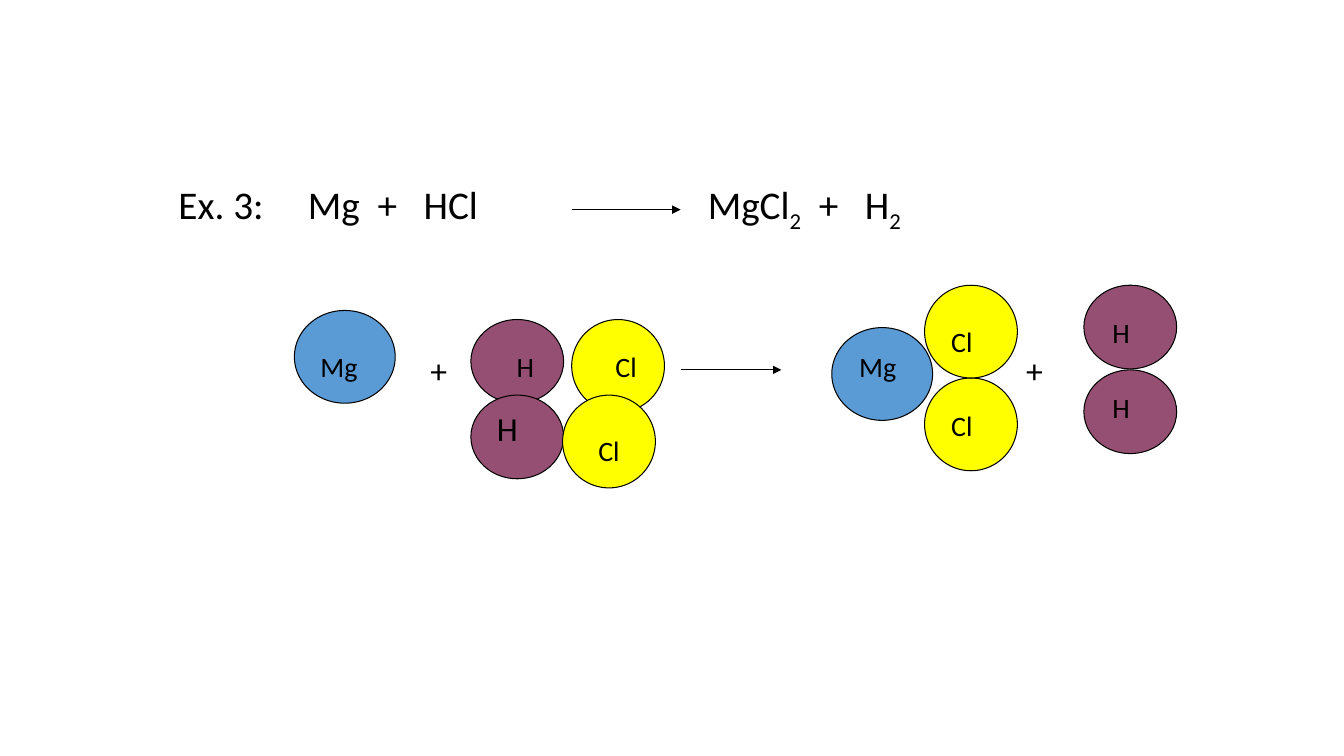
from lxml import etree
from pptx import Presentation
from pptx.dml.color import RGBColor
from pptx.enum.shapes import MSO_CONNECTOR as CONNECTOR, MSO_SHAPE as SHAPE
from pptx.enum.text import MSO_AUTO_SIZE as AUTO_SIZE, PP_ALIGN as ALIGN
from pptx.oxml.ns import qn
from pptx.util import Inches, Pt

COLORS = {"ink": "000000", "Mg": "5B9BD5", "H": "954F72", "Cl": "FFFF00"}
ATOM_SIZES = {"Mg": (1, 0.92), "H": (0.92, 0.83), "Cl": (0.92, 0.92)}
LABEL_WIDTHS = {"Mg": 0.75, "H": 0.58, "Cl": 0.58, "+": 0.5}


def add_run(paragraph, text, size):
    run = paragraph.add_run()
    run.text = text
    run.font.size = Pt(size)
    run.font.name = "Calibri"
    run.font.color.rgb = RGBColor.from_string(COLORS["ink"])
    return run


def add_label(text, left, top, size=20, align=ALIGN.CENTER):
    height = 0.43 if size == 20 else 0.5
    label = slide.shapes.add_textbox(
        Inches(left), Inches(top), Inches(LABEL_WIDTHS[text]), Inches(height))
    label.text_frame.word_wrap = True
    label.text_frame.auto_size = AUTO_SIZE.SHAPE_TO_FIT_TEXT
    paragraph = label.text_frame.paragraphs[0]
    paragraph.alignment = align
    add_run(paragraph, text, size)


presentation = Presentation()
presentation.slide_width = Inches(13.33)
presentation.slide_height = Inches(7.5)
slide = presentation.slides.add_slide(presentation.slide_layouts[1])
title = slide.shapes.title.element
title.getparent().remove(title)

# Equation in symbols
equation = slide.placeholders[1]
equation.left, equation.top = Inches(1.67), Inches(1.75)
equation.width, equation.height = Inches(9), Inches(4.95)
equation.text_frame.auto_size = AUTO_SIZE.NONE
formula = equation.text_frame.paragraphs[0]
formula.line_spacing = 0.9
formula.space_before = Pt(10)
for text, is_subscript in [("Ex. 3:     Mg  +   HCl    \t\tMgCl", False),
                           ("2", True), ("  +   H", False), ("2", True)]:
    run = add_run(formula, text, 28)
    if is_subscript:
        run.font._element.set("baseline", "-25000")

# Hanging indent without bullet, and default tabs one inch apart
properties = formula._p.get_or_add_pPr()
body_style = presentation.slide_master.element.find(
    ".//" + qn("p:bodyStyle") + "/" + qn("a:lvl1pPr"))
for style in (body_style, properties):
    style.set("marL", str(Inches(0.25)))
    style.set("indent", str(Inches(-0.25)))
    style.set("defTabSz", str(Inches(1)))
etree.SubElement(properties, qn("a:buNone"))

# Reaction arrows
for start, end, y in [(5.67, 6.75, 2.08), (6.75, 7.75, 3.67)]:
    arrow = slide.shapes.add_connector(
        CONNECTOR.STRAIGHT, Inches(start), Inches(y), Inches(end), Inches(y))
    arrow.line.width = Pt(0.75)
    arrow.line.color.rgb = RGBColor.from_string(COLORS["ink"])
    etree.SubElement(arrow.line._get_or_add_ln(), qn("a:tailEnd"), type="triangle")
    etree.SubElement(arrow._element.spPr, qn("a:effectLst"))

# Atoms from back to front: element, left, top, label left, label top
atoms = [
    ("Mg", 2.92, 3.08, 3.08, 3.42),
    ("H", 4.67, 3.17, 4.92, 3.42),
    ("Cl", 5.67, 3.17, 5.92, 3.42),
    ("H", 4.67, 3.92, 4.83, 4),
    ("Cl", 5.58, 3.92, 5.75, 4.25),
    ("Mg", 8.25, 3.25, 8.33, 3.42),
    ("Cl", 9.17, 3.75, 9.25, 4),
    ("Cl", 9.17, 2.83, 9.25, 3.17),
    ("H", 10.75, 2.83, 10.83, 3.08),
    ("H", 10.75, 3.67, 10.83, 3.83),
]
for element, left, top, *_ in atoms:
    width, height = ATOM_SIZES[element]
    atom = slide.shapes.add_shape(
        SHAPE.OVAL, Inches(left), Inches(top), Inches(width), Inches(height))
    atom.shadow.inherit = False
    atom.fill.solid()
    atom.fill.fore_color.rgb = RGBColor.from_string(COLORS[element])
    atom.line.width = Pt(0.75)
    atom.line.color.rgb = RGBColor.from_string(COLORS["ink"])

# Atom labels: the first Mg and the lower left H are left-aligned
for index, (element, _, _, left, top) in enumerate(atoms):
    size = 24 if index == 3 else 20
    align = ALIGN.LEFT if index in (0, 3) else ALIGN.CENTER
    add_label(element, left, top, size, align)

# Plus signs
for left in (4.17, 10.08):
    add_label("+", left, 3.42, 24, ALIGN.LEFT)

presentation.save("out.pptx")
